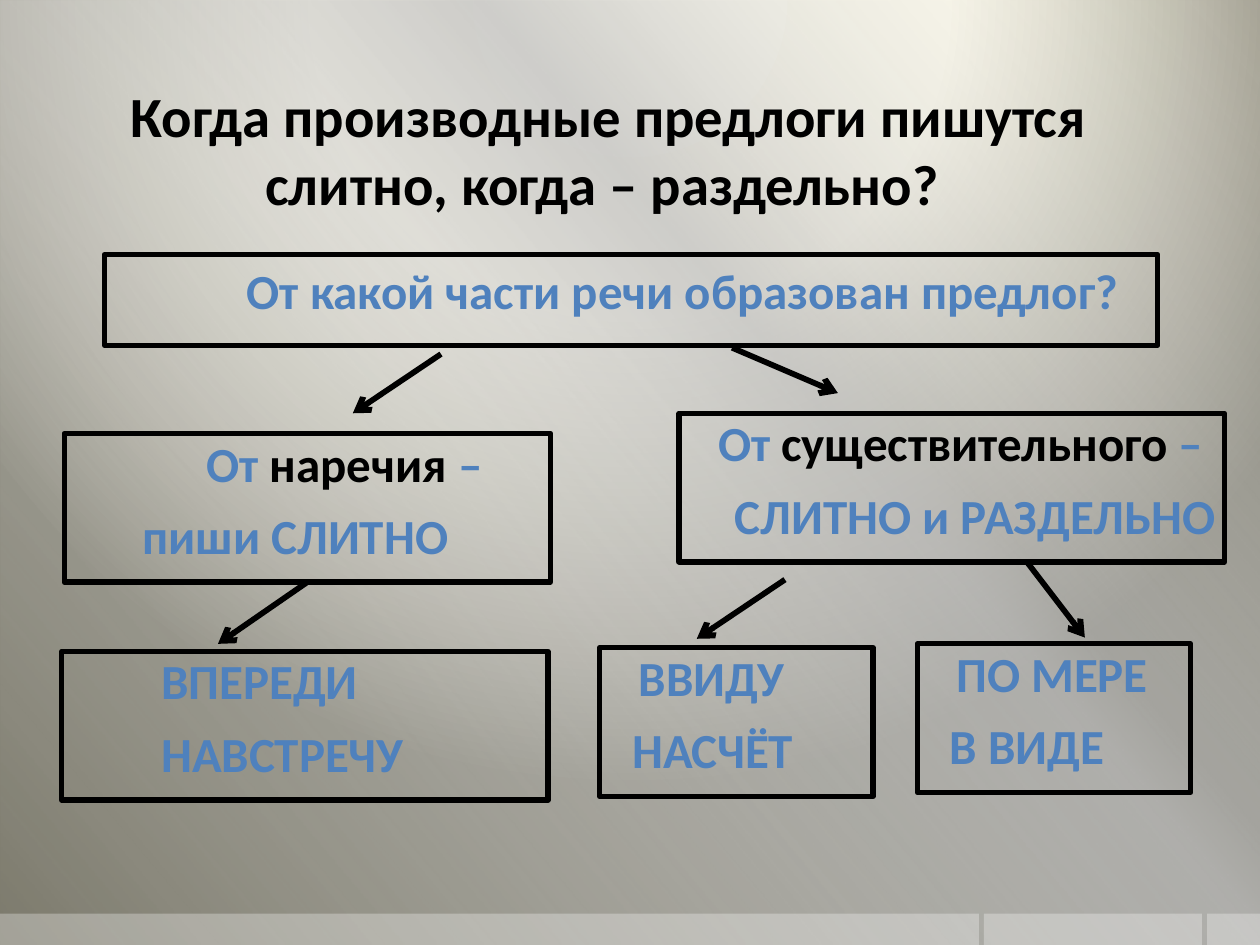
from lxml import etree
from pptx import Presentation
from pptx.dml.color import RGBColor
from pptx.enum.shapes import MSO_CONNECTOR, MSO_SHAPE
from pptx.enum.text import MSO_ANCHOR, PP_ALIGN
from pptx.oxml.ns import qn
from pptx.util import Inches, Pt

RECT = MSO_SHAPE.RECTANGLE
LINE = MSO_CONNECTOR.STRAIGHT
LEFT, CENTER = PP_ALIGN.LEFT, PP_ALIGN.CENTER
TOP, MIDDLE = MSO_ANCHOR.TOP, MSO_ANCHOR.MIDDLE
BOTTOM = 2
COLORS = {
    "black": "000000", "blue": "4F81BD", "white": "FFFFFF", "gray": "BFBFBF",
    "cream": "FEFCEE", "sand": "FDFAEA", "olive": "7B796B",
}


def rgb(name):
    return RGBColor.from_string(COLORS[name])


def add_tag(parent, tag, **attrs):
    node = etree.SubElement(parent, qn(tag))
    for key, value in attrs.items():
        node.set(key, str(value))
    return node


def add_alpha(color, percent):
    add_tag(color, "a:alpha", val=percent * 1000)


def blend(root, stops):
    solid = root.find(".//" + qn("a:solidFill"))
    grad = etree.Element(qn("a:gradFill"), rotWithShape="1")
    items = add_tag(grad, "a:gsLst")
    for place, name, alpha in stops:
        stop = add_tag(items, "a:gs", pos=place * 1000)
        color = add_tag(stop, "a:srgbClr", val=COLORS[name])
        if alpha < 100:
            add_alpha(color, alpha)
    solid.getparent().replace(solid, grad)
    return grad


def add_rect(slide, x, y, w, h):
    rect = slide.shapes.add_shape(RECT, Inches(x), Inches(y), Inches(w), Inches(h))
    rect.shadow.inherit = False
    rect.line.fill.background()
    return rect


def add_back(slide):
    slide.background.fill.solid()
    grad = blend(slide.element, [(0, "cream", 100), (40, "sand", 100), (100, "olive", 100)])
    path = add_tag(grad, "a:path", path="circle")
    add_tag(path, "a:fillToRect", l=50000, t=-80000, r=50000, b=180000)

    sheen = add_rect(slide, 0, 0, 10, 7.5)
    sheen.fill.solid()
    grad = blend(sheen.element, [(0, "white", 0), (34, "gray", 61), (38, "gray", 76), (100, "white", 0)])
    add_tag(grad, "a:lin", ang=140 * 60000, scaled=0)

    for x, w in [(9.58, 0.42), (7.81, 1.73), (0, 7.77)]:
        bar = add_rect(slide, x, 7.25, w, 0.25)
        bar.fill.solid()
        bar.fill.fore_color.rgb = rgb("white")
        add_alpha(bar.element.find(".//" + qn("a:srgbClr")), 30)


def set_frame(shape, anchor):
    frame = shape.text_frame
    frame.word_wrap = True
    frame.vertical_anchor = anchor
    frame.margin_left = frame.margin_right = 0
    frame.margin_top = frame.margin_bottom = Inches(0.05)
    return frame


def add_run(para, text, size, color):
    run = para.add_run()
    run.text = text
    font = run.font
    font.name, font.size, font.bold = "Calibri", Pt(size), True
    font.color.rgb = rgb(color)


def add_title(slide, text):
    box = slide.shapes.add_textbox(Inches(0.28), Inches(0.68), Inches(9), Inches(1))
    para = set_frame(box, MIDDLE).paragraphs[0]
    para.alignment = CENTER
    add_run(para, text, 32.4, "black")


def add_box(slide, x, y, w, h, lines, pitch=0.9):
    box = add_rect(slide, x, y, w, h)
    box.fill.background()
    box.line.color.rgb = rgb("black")
    box.line.width = Pt(3)
    frame = set_frame(box, TOP)
    for i, (indent, runs) in enumerate(lines):
        para = frame.add_paragraph() if i else frame.paragraphs[0]
        para.alignment = LEFT
        para.line_spacing = pitch
        para.space_before = Pt(5 if i else 0)
        para.space_after = Pt(6)
        props = para._p.get_or_add_pPr()
        props.set("marL", str(Inches(indent)))
        props.set("indent", "0")
        for text, color in runs:
            add_run(para, text, 28, color)
    return box


def add_arrow(slide, x1, y1, x2, y2):
    arrow = slide.shapes.add_connector(LINE, Inches(x1), Inches(y1), Inches(x2), Inches(y2))
    arrow.line.color.rgb = rgb("black")
    arrow.line.width = Pt(3.25)
    add_tag(arrow.line._get_or_add_ln(), "a:tailEnd", type="arrow")
    add_tag(arrow.element.spPr, "a:effectLst")
    return arrow


def part_lines(indent, part, next_indent, rule):
    first = [("От ", "blue"), (part, "black"), (" –", "blue")]
    return [(indent, first), (next_indent, [(rule, "blue")])]


def word_lines(*pairs):
    return [(indent, [(word, "blue")]) for indent, word in pairs]


def main():
    deck = Presentation()
    deck.slide_width, deck.slide_height = Inches(10), Inches(7.5)
    slide = deck.slides.add_slide(deck.slide_layouts[6])
    add_back(slide)
    add_title(slide, " Когда производные предлоги пишутся слитно, когда – раздельно?")

    add_box(slide, 0.83, 2.02, 8.36, 0.72,
            word_lines((1.13, "От какой части речи образован предлог?")), 1.0)
    adverb = add_box(slide, 0.51, 3.44, 3.86, 1.18,
                     part_lines(1.13, "наречия", 0.62, "пиши СЛИТНО"))
    add_box(slide, 5.39, 3.28, 4.33, 1.18,
            part_lines(0.31, "существительного", 0.44, "СЛИТНО и РАЗДЕЛЬНО"))
    add_box(slide, 0.49, 5.17, 3.86, 1.18,
            word_lines((0.79, "ВПЕРЕДИ"), (0.79, "НАВСТРЕЧУ")))
    add_box(slide, 4.76, 5.14, 2.17, 1.18,
            word_lines((0.31, "ВВИДУ"), (0.26, "НАСЧЁТ")))
    add_box(slide, 7.28, 5.11, 2.17, 1.18,
            word_lines((0.31, "ПО МЕРЕ"), (0.26, "В ВИДЕ")))

    add_arrow(slide, 3.5, 2.81, 2.8, 3.28)
    add_arrow(slide, 5.81, 2.76, 6.65, 3.12)
    add_arrow(slide, 2.44, 4.64, 1.73, 5.11).begin_connect(adverb, BOTTOM)
    add_arrow(slide, 6.23, 4.6, 5.53, 5.07)
    add_arrow(slide, 8.15, 4.46, 8.61, 5.06)
    deck.save("out.pptx")


if __name__ == "__main__":
    main()
